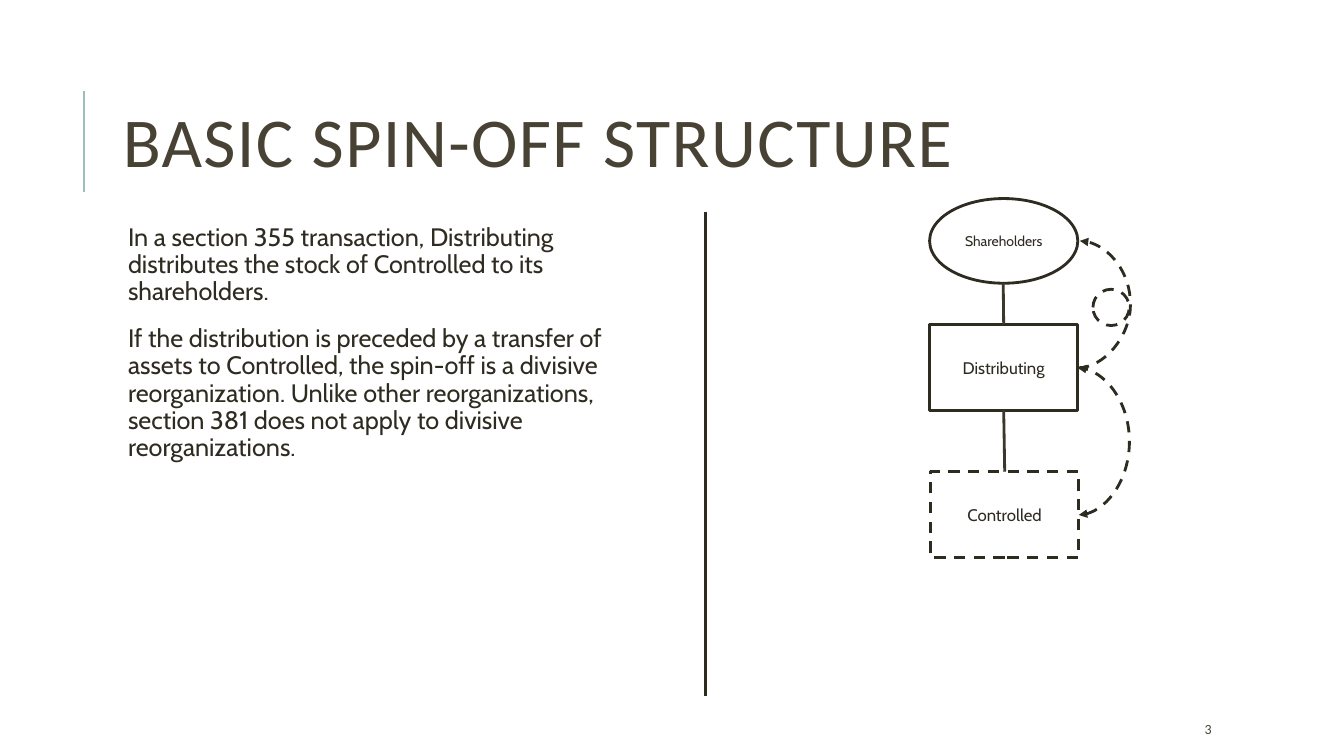
import pptx
import pptx.util
import pptx.dml.color
import pptx.enum.dml
import pptx.enum.shapes
import pptx.enum.text
import pptx.oxml
import pptx.oxml.ns
from pptx.util import Inches

COLORS = {"ink": "2E2B21", "heading": "474233", "link": "3B372A", "accent": "9CBEBD"}
SHAPE = pptx.enum.shapes.MSO_SHAPE
CONNECTOR = pptx.enum.shapes.MSO_CONNECTOR
BULGE_X = 11.21
BODY = [
    "In a section 355 transaction, Distributing distributes the stock of Controlled to its shareholders.",
    "If the distribution is preceded by a transfer of assets to Controlled, the spin-off is a divisive "
    "reorganization. Unlike other reorganizations, section 381 does not apply to divisive reorganizations.",
]


def rgb(name):
    return pptx.dml.color.RGBColor.from_string(COLORS[name])


def add_xml(parent, tag, **attrs):
    el = pptx.oxml.parse_xml(f"<a:{tag} {pptx.oxml.ns.nsdecls('a')}/>")
    for key, value in attrs.items():
        el.set(key, str(value))
    parent.append(el)


def style_line(line, color="ink", width=2, dashed=False):
    line.color.rgb = rgb(color)
    line.width = pptx.util.Pt(width)
    if dashed:
        line.dash_style = pptx.enum.dml.MSO_LINE.DASH


def write(sp, paragraphs, size, font="Cabin", color="ink", inset=(0.1, 0.05), middle=True,
          centered=False, line_spacing=None, before=0, after=0, indent=0, tracking=0):
    tf = sp.text_frame
    tf.word_wrap = True
    tf.margin_left = tf.margin_right = Inches(inset[0])
    tf.margin_top = tf.margin_bottom = Inches(inset[1])
    anchor = pptx.enum.text.MSO_ANCHOR
    tf.vertical_anchor = anchor.MIDDLE if middle else anchor.TOP
    align = pptx.enum.text.PP_ALIGN
    for i, text in enumerate(paragraphs):
        p = tf.paragraphs[0] if i == 0 else tf.add_paragraph()
        p.alignment = align.CENTER if centered else align.LEFT
        p.space_before, p.space_after = pptx.util.Pt(before), pptx.util.Pt(after)
        if line_spacing:
            p.line_spacing = line_spacing
        if indent:
            p._p.get_or_add_pPr().set("marL", str(Inches(indent)))
        r = p.add_run()
        r.text = text
        r.font.size = pptx.util.Pt(size)
        r.font.name = font
        r.font.color.rgb = rgb(color)
        if tracking:
            r._r.get_or_add_rPr().set("spc", str(tracking * 100))


def add_text(s, box, paragraphs, size, **fmt):
    write(s.shapes.add_textbox(*map(Inches, box)), paragraphs, size, **fmt)


def add_node(s, kind, box, text=None, size=12, inset=0.05, dashed=False):
    sp = s.shapes.add_shape(kind, *map(Inches, box))
    sp.shadow.inherit = False
    sp.fill.background()
    style_line(sp.line, dashed=dashed)
    if text:
        write(sp, [text], size, inset=(inset, inset), centered=True)
    return sp


def add_line(s, start, end, kind=CONNECTOR.STRAIGHT, **fmt):
    cx = s.shapes.add_connector(kind, *map(Inches, start + end))
    style_line(cx.line, **fmt)
    add_xml(cx._element.spPr, "effectLst")
    return cx


def add_arc(s, start, end, heads):
    cx = add_line(s, start, end, CONNECTOR.CURVE, dashed=True)
    adj = round((BULGE_X - start[0]) / (end[0] - start[0]) * 100000)
    guides = cx._element.spPr.prstGeom.get_or_add_avLst()
    add_xml(guides, "gd", name="adj1", fmla=f"val {adj}")
    for head in heads:
        add_xml(cx.line._get_or_add_ln(), head, type="triangle")


def add_structure(s):
    distributing = add_node(s, SHAPE.RECTANGLE, (9.22, 3.22, 1.47, 0.85), "Distributing")
    add_arc(s, (10.69, 3.65), (10.71, 2.39), ["tailEnd"])
    add_node(s, SHAPE.OVAL, (9.22, 1.97, 1.47, 0.84), "Shareholders", size=10, inset=0)
    add_node(s, SHAPE.OVAL, (10.84, 2.87, 0.36, 0.36), dashed=True)
    controlled = add_node(s, SHAPE.RECTANGLE, (9.23, 4.68, 1.47, 0.85), "Controlled", dashed=True)
    lower = add_line(s, (9.96, 4.68), (9.95, 4.07), color="link")
    lower.begin_connect(controlled, 0)
    lower.end_connect(distributing, 2)
    upper = add_line(s, (9.95, 3.22), (9.95, 2.81), color="link")
    upper.begin_connect(distributing, 0)
    add_arc(s, (10.7, 5.11), (10.69, 3.65), ["headEnd", "tailEnd"])


def main():
    prs = pptx.Presentation()
    prs.slide_width, prs.slide_height = Inches(13.33), Inches(7.5)
    s = prs.slides.add_slide(prs.slide_layouts[6])
    add_line(s, (0.83, 1.9), (0.83, 0.9), color="accent", width=1.5)
    add_text(s, (1.12, 0.64, 10.63, 1.64), ["BASIC SPIN-OFF STRUCTURE"], 50, font="Calibri",
             color="heading", line_spacing=0.8, tracking=1)
    add_text(s, (1.12, 2.18, 5.2, 4.4), BODY, 18, inset=(0.05, 0.05), middle=False,
             line_spacing=0.9, before=12, after=2, indent=0.1)
    add_structure(s)
    add_line(s, (7, 2.1), (7, 6.9))
    add_text(s, (11.85, 7.08, 1.06, 0.3), ["3"], 10, font="Calibri", color="heading")
    prs.save("out.pptx")


if __name__ == "__main__":
    main()
